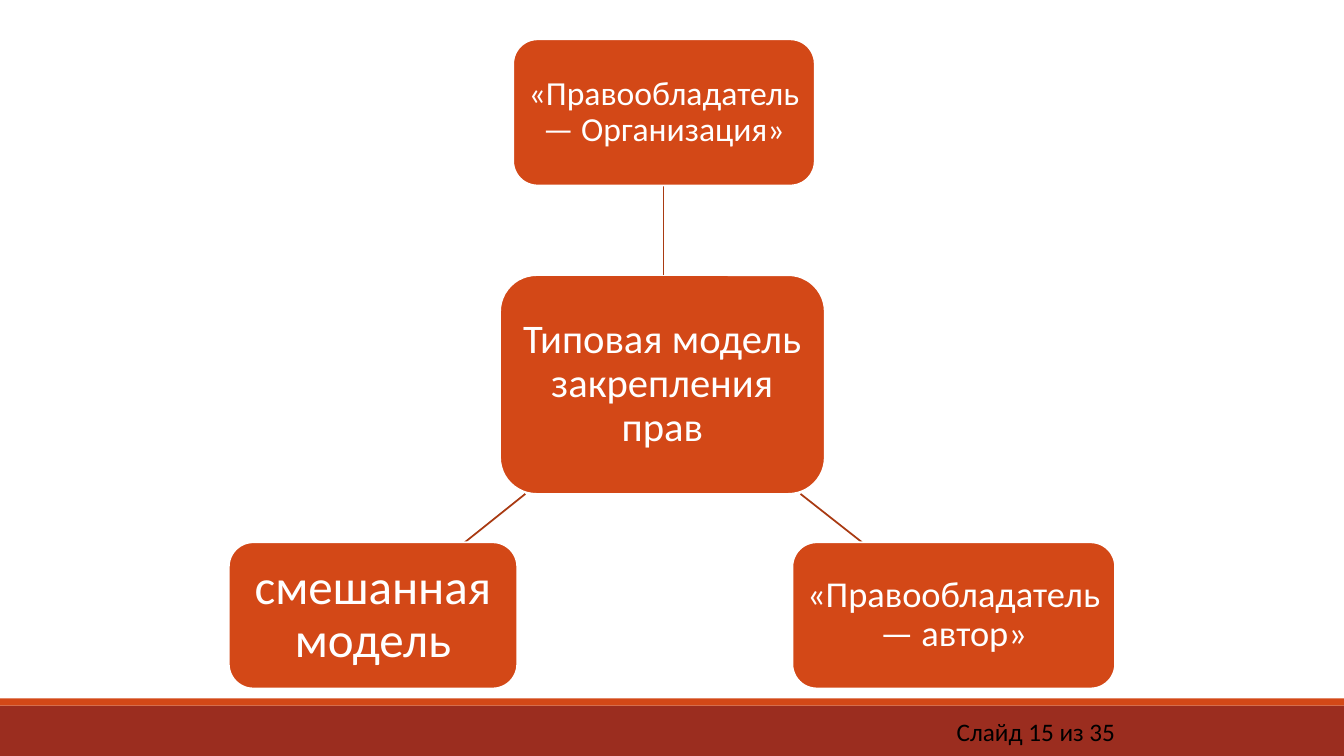
from pptx import Presentation
from pptx.dml.color import RGBColor
from pptx.enum.shapes import MSO_CONNECTOR as Conn, MSO_SHAPE as Form
from pptx.enum.text import MSO_ANCHOR as Anchor, PP_ALIGN as Align
from pptx.oxml.ns import qn
from pptx.util import Pt
from lxml.etree import SubElement

UNIT = 9144


def px(n):
    return n * UNIT


def tint(code):
    return RGBColor.from_string(code)


class Board:
    font = "Calibri"
    fill = "D34817"
    band = "9B2D1F"
    edge = "A93A12"
    white = "FFFFFF"
    black = "000000"
    width = Pt(1.25)

    def __init__(self, deck):
        self.slide = deck.slides.add_slide(deck.slide_layouts[6])
        self.shapes = self.slide.shapes

    def shape(self, form, box, fill):
        item = self.shapes.add_shape(form, *map(px, box))
        item.shadow.inherit = False
        item.fill.solid()
        item.fill.fore_color.rgb = tint(fill)
        item.line.fill.background()
        return item

    def words(self, para, text, size, color):
        run = para.add_run()
        run.text = text
        run.font.name = self.font
        run.font.size = Pt(size)
        run.font.color.rgb = tint(color)

    def bar(self, box, fill):
        self.shape(Form.RECTANGLE, box, fill)

    def node(self, box, text, size):
        item = self.shape(Form.ROUNDED_RECTANGLE, box, self.fill)
        item.line.color.rgb = tint(self.white)
        item.line.width = self.width
        frame = item.text_frame
        frame.word_wrap = True
        frame.vertical_anchor = Anchor.MIDDLE
        inset = Pt(size / 5)
        frame.margin_left = frame.margin_right = inset
        frame.margin_top = frame.margin_bottom = inset
        para = frame.paragraphs[0]
        para.alignment = Align.CENTER
        para.line_spacing = 0.9
        self.words(para, text, size, self.white)

    def link(self, ends):
        item = self.shapes.add_connector(Conn.STRAIGHT, *map(px, ends))
        item.line.color.rgb = tint(self.edge)
        item.line.width = self.width
        SubElement(item._element.spPr, qn("a:effectLst"))

    def label(self, box, text, size):
        frame = self.shapes.add_textbox(*map(px, box)).text_frame
        frame.word_wrap = True
        self.words(frame.paragraphs[0], text, size, self.black)


def main():
    deck = Presentation()
    deck.slide_width, deck.slide_height = px(1333), px(750)
    board = Board(deck)
    board.bar((0, 700, 1333, 50), board.band)
    board.bar((0, 693, 1333, 7), board.fill)
    board.label((939, 706, 186, 40), "Слайд 15 из 35", 18)

    board.node((496, 273, 322, 217), "Типовая модель закрепления прав", 29)
    models = [
        ((658, 273, 658, 184), (509, 39, 299, 145), "«Правообладатель — Организация»", 24),
        ((794, 490, 855, 538), (786, 538, 320, 145), "«Правообладатель — автор»", 26),
        ((521, 490, 461, 538), (227, 538, 286, 145), "смешанная модель", 35),
    ]
    for ends, box, text, size in models:
        board.link(ends)
        board.node(box, text, size)
    deck.save("out.pptx")


if __name__ == "__main__":
    main()
